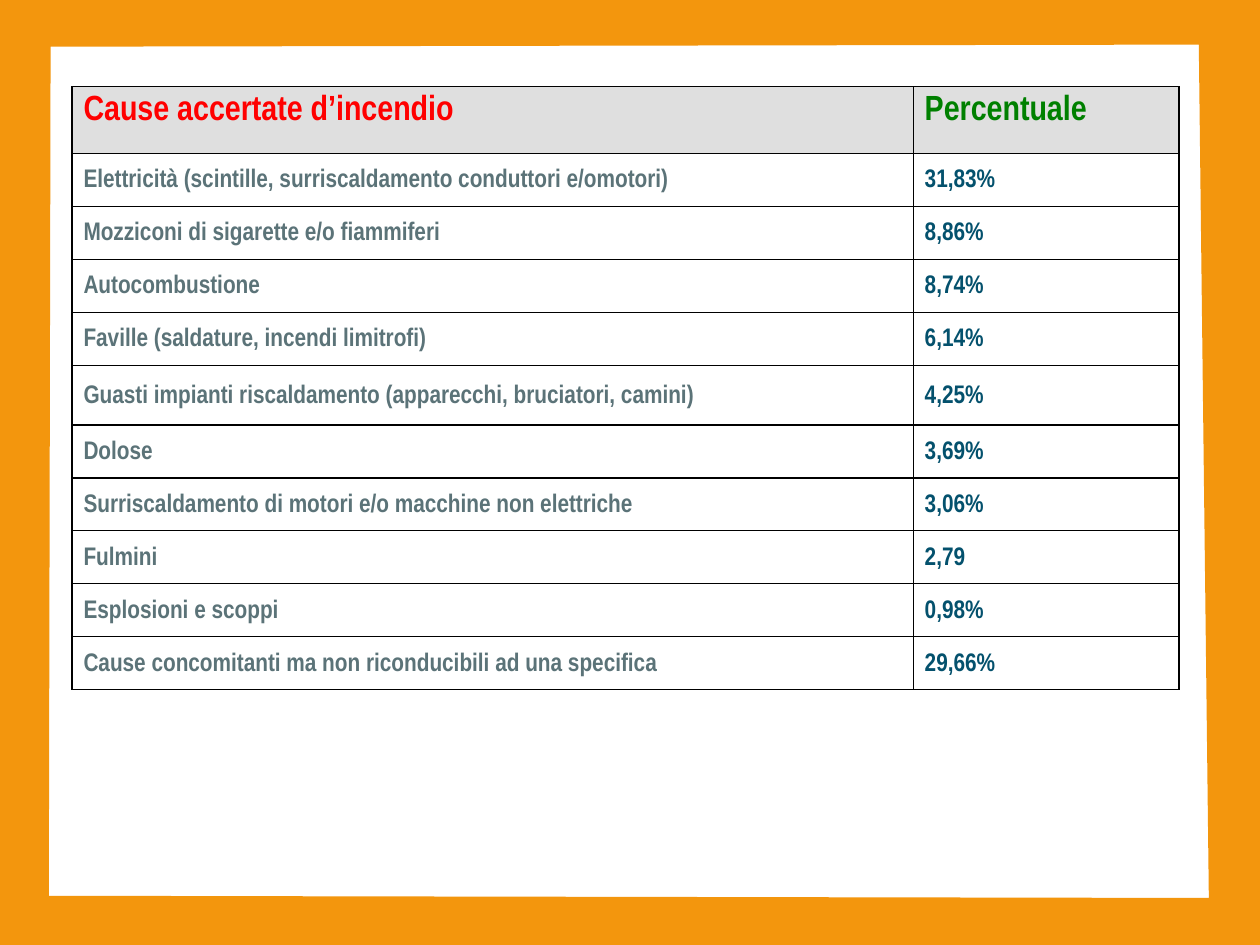
from lxml import etree
from pptx import Presentation
from pptx.dml.color import RGBColor
from pptx.enum import text as t
from pptx.oxml import ns
from pptx.util import Pt

COLORS = {
    "frame": "F3960D", "header": "DFDFDF", "border": "000000",
    "cause_title": "FF0000", "percent_title": "008000",
    "cause": "5B7378", "percent": "04516D",
}
FONT = "Arial Narrow"
WIDTH, HEIGHT = 793.75, 595.25

TITLES = ("Cause accertate d’incendio", "Percentuale")
CAUSES = [
    ("Elettricità (scintille, surriscaldamento conduttori e/omotori)", "31,83%"),
    ("Mozziconi di sigarette e/o fiammiferi", "8,86%"),
    ("Autocombustione", "8,74%"),
    ("Faville (saldature, incendi limitrofi)", "6,14%"),
    ("Guasti impianti riscaldamento (apparecchi, bruciatori, camini)", "4,25%"),
    ("Dolose", "3,69%"),
    ("Surriscaldamento di motori e/o macchine non elettriche", "3,06%"),
    ("Fulmini", "2,79"),
    ("Esplosioni e scoppi", "0,98%"),
    ("Cause concomitanti ma non riconducibili ad una specifica", "29,66%"),
]
COLUMN_SHARES = (0.76, 0.24)
HEADER_HEIGHT, ROW_HEIGHT, TALL_ROW_HEIGHT = 42.2, 33.35, 37.6
TALL_ROW = 5


def rgb(name):
    return RGBColor.from_string(COLORS[name])


def write(cell, content, *, size, color, align=t.PP_ALIGN.LEFT,
          anchor=t.MSO_ANCHOR.MIDDLE, top=5):
    cell.margin_left = cell.margin_right = Pt(7.2)
    cell.margin_top, cell.margin_bottom = Pt(top), Pt(3.6)
    cell.vertical_anchor = anchor
    paragraph = cell.text_frame.paragraphs[0]
    paragraph.alignment = align
    paragraph.line_spacing = 0.94
    indents = paragraph._p.get_or_add_pPr()
    indents.set("marL", str(Pt(27)))
    indents.set("indent", str(-Pt(27)))
    run = paragraph.add_run()
    run.text = content
    run.font.name, run.font.size, run.font.bold = FONT, Pt(size), True
    run.font.color.rgb = rgb(color)


def add_borders(cell):
    properties = cell._tc.get_or_add_tcPr()
    for position, side in enumerate(("lnL", "lnR", "lnT", "lnB")):
        border = etree.Element(ns.qn(f"a:{side}"), w=str(Pt(0.91)))
        fill = etree.SubElement(border, ns.qn("a:solidFill"))
        etree.SubElement(fill, ns.qn("a:srgbClr"), val=COLORS["border"])
        properties.insert(position, border)


def add_causes_table(slide, left, top, width):
    heights = [HEADER_HEIGHT] + [ROW_HEIGHT] * len(CAUSES)
    heights[TALL_ROW] = TALL_ROW_HEIGHT
    table = slide.shapes.add_table(
        len(heights), len(TITLES), Pt(left), Pt(top), Pt(width), Pt(sum(heights))
    ).table
    table.first_row = table.horz_banding = False
    for column, share in zip(table.columns, COLUMN_SHARES):
        column.width = Pt(width * share)
    for row, height in zip(table.rows, heights):
        row.height = Pt(height)

    for column, (title, color) in enumerate(zip(TITLES, ("cause_title", "percent_title"))):
        cell = table.cell(0, column)
        write(cell, title, size=22, color=color, anchor=t.MSO_ANCHOR.TOP, top=5.5)
        cell.fill.solid()
        cell.fill.fore_color.rgb = rgb("header")
    for row, (cause, percent) in enumerate(CAUSES, start=1):
        write(table.cell(row, 0), cause, size=16, color="cause", align=t.PP_ALIGN.JUSTIFY)
        write(table.cell(row, 1), percent, size=16, color="percent")
        for column in range(len(TITLES)):
            table.cell(row, column).fill.background()
    for cell in table.iter_cells():
        add_borders(cell)


def add_frame(slide, left, top, width, height):
    """Draw a solid border around a slightly crooked opening."""
    right, bottom = left + width, top + height
    outer = [(left, top), (right, top), (right, bottom), (left, bottom)]
    opening = [(left + 31.9, top + 29.4), (left + 30.8, bottom - 31),
               (right - 32.2, bottom - 29.6), (right - 38.5, top + 28.1)]
    outer, opening = ([(Pt(x), Pt(y)) for x, y in outline] for outline in (outer, opening))
    builder = slide.shapes.build_freeform(*outer[0])
    builder.add_line_segments(outer[1:], close=True)
    builder.move_to(*opening[0])
    builder.add_line_segments(opening[1:], close=True)
    frame = builder.convert_to_shape()
    frame.shadow.inherit = False
    frame.fill.solid()
    frame.fill.fore_color.rgb = rgb("frame")
    frame.line.fill.background()


def main():
    deck = Presentation()
    deck.slide_width, deck.slide_height = Pt(WIDTH), Pt(HEIGHT)
    slide = deck.slides.add_slide(deck.slide_layouts[6])
    add_causes_table(slide, 45.4, 54.6, 697.3)
    add_frame(slide, 0, 0, WIDTH, HEIGHT)
    deck.save("out.pptx")


if __name__ == "__main__":
    main()
